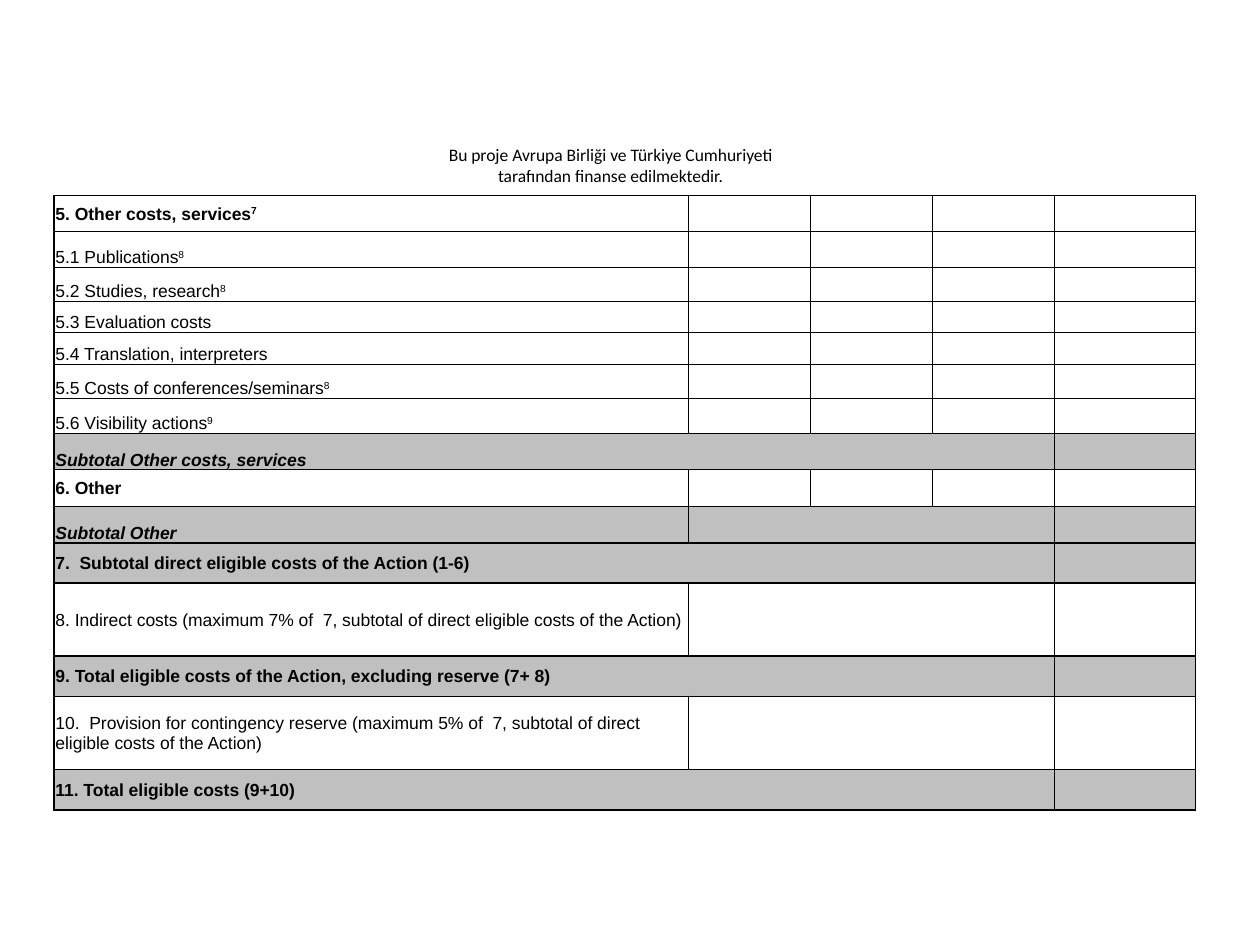
from lxml import etree
from pptx import Presentation, util as u
from pptx.dml.color import RGBColor
from pptx.enum import text
from pptx.oxml.ns import qn

BLACK = RGBColor(0x00, 0x00, 0x00)
GREY = RGBColor(0xC0, 0xC0, 0xC0)
MIDDLE, BOTTOM = text.MSO_ANCHOR.MIDDLE, text.MSO_ANCHOR.BOTTOM

# Row styles: anchor, bold, italic, grey, first column of the joined group
HEAD = (MIDDLE, True, False, False, None)
ITEM = (BOTTOM, False, False, False, None)
SUB_WIDE = (BOTTOM, True, True, True, 0)
SUB = (BOTTOM, True, True, True, 1)
TOTAL = (MIDDLE, True, False, True, 0)
SHARE = (MIDDLE, False, False, False, 1)

# Height in inches, label, footnote mark, style
ROWS = [
    (0.29, "5. Other costs, services", "7", HEAD),
    (0.28, "5.1 Publications", "8", ITEM),
    (0.27, "5.2 Studies, research", "8", ITEM),
    (0.25, "5.3 Evaluation costs", "", ITEM),
    (0.25, "5.4 Translation, interpreters", "", ITEM),
    (0.27, "5.5 Costs of conferences/seminars", "8", ITEM),
    (0.28, "5.6 Visibility actions", "9", ITEM),
    (0.29, "Subtotal Other costs, services", "", SUB_WIDE),
    (0.29, "6. Other", "", HEAD),
    (0.29, "Subtotal Other", "", SUB),
    (0.32, "7.  Subtotal direct eligible costs of the Action (1-6)", "", TOTAL),
    (0.58, "8. Indirect costs (maximum 7% of  7, subtotal of direct eligible costs of the Action)", "", SHARE),
    (0.32, "9. Total eligible costs of the Action, excluding reserve (7+ 8)", "", TOTAL),
    (0.58, "10.  Provision for contingency reserve (maximum 5% of  7, subtotal of direct eligible costs of the Action)", "", SHARE),
    (0.32, "11. Total eligible costs (9+10)", "", TOTAL),
]
COLS = [5.03, 0.97, 0.97, 0.97, 1.12]
LAST = len(COLS) - 1
FIRST_THICK = 10  # horizontal rules from this one down are 1 pt


def add_run(p, words, font, bold=False, italic=False):
    r = p.add_run()
    r.text = words
    r.font.name, r.font.size = font, u.Pt(10)
    r.font.bold, r.font.italic = bold, italic
    r.font.color.rgb = BLACK
    return r


def set_border(cell, side, points):
    tc_pr = cell._tc.get_or_add_tcPr()
    ln = etree.SubElement(tc_pr, qn("a:ln" + side), w=str(u.Pt(points)))
    if points:
        fill = etree.SubElement(ln, qn("a:solidFill"))
        etree.SubElement(fill, qn("a:srgbClr"), val=str(BLACK))
    else:
        etree.SubElement(ln, qn("a:noFill"))


prs = Presentation()
prs.slide_width, prs.slide_height = u.Inches(10), u.Inches(7.5)
s = prs.slides.add_slide(prs.slide_layouts[6])

# Funding note
sp = s.shapes.add_textbox(u.Inches(3.39), u.Inches(1.09), u.Inches(2.91), u.Inches(0.31))
tf = sp.text_frame
tf.word_wrap = True
p = tf.paragraphs[0]
p.alignment = text.PP_ALIGN.CENTER
add_run(p, "Bu proje Avrupa Birliği ve Türkiye Cumhuriyeti tarafından finanse edilmektedir.", "Calibri")

# Budget table
table = s.shapes.add_table(len(ROWS), len(COLS), u.Inches(0.43), u.Inches(1.55),
                           u.Inches(sum(COLS)), u.Inches(sum(row[0] for row in ROWS))).table
table.first_row = table.horz_banding = False
for col, width in zip(table.columns, COLS):
    col.width = u.Inches(width)

for i, (height, label, mark, style) in enumerate(ROWS):
    anchor, bold, italic, grey, joined = style
    table.rows[i].height = u.Inches(height)
    for j in range(len(COLS)):
        cell = table.cell(i, j)
        cell.vertical_anchor = anchor
        cell.margin_left = cell.margin_right = cell.margin_top = u.Inches(0.01)
        cell.margin_bottom = 0

        # Vertical rules vanish inside the joined group
        for side, edge in (("L", j), ("R", j + 1)):
            inside = joined is not None and joined < edge < LAST
            outer = edge in (0, len(COLS))
            set_border(cell, side, 0 if inside else 1 if outer else 0.5)
        for side, edge in (("T", i), ("B", i + 1)):
            set_border(cell, side, 1 if edge >= FIRST_THICK else 0.5)

        if grey:
            cell.fill.solid()
            cell.fill.fore_color.rgb = GREY
        else:
            cell.fill.background()

        p = cell.text_frame.paragraphs[0]
        if j == 0:
            add_run(p, label, "Arial", bold, italic)
            if mark:
                r = add_run(p, mark, "Arial", bold, italic)
                r._r.get_or_add_rPr().set("baseline", "30000")
        else:
            etree.SubElement(p._p, qn("a:endParaRPr"), sz="1000")

prs.save("out.pptx")
